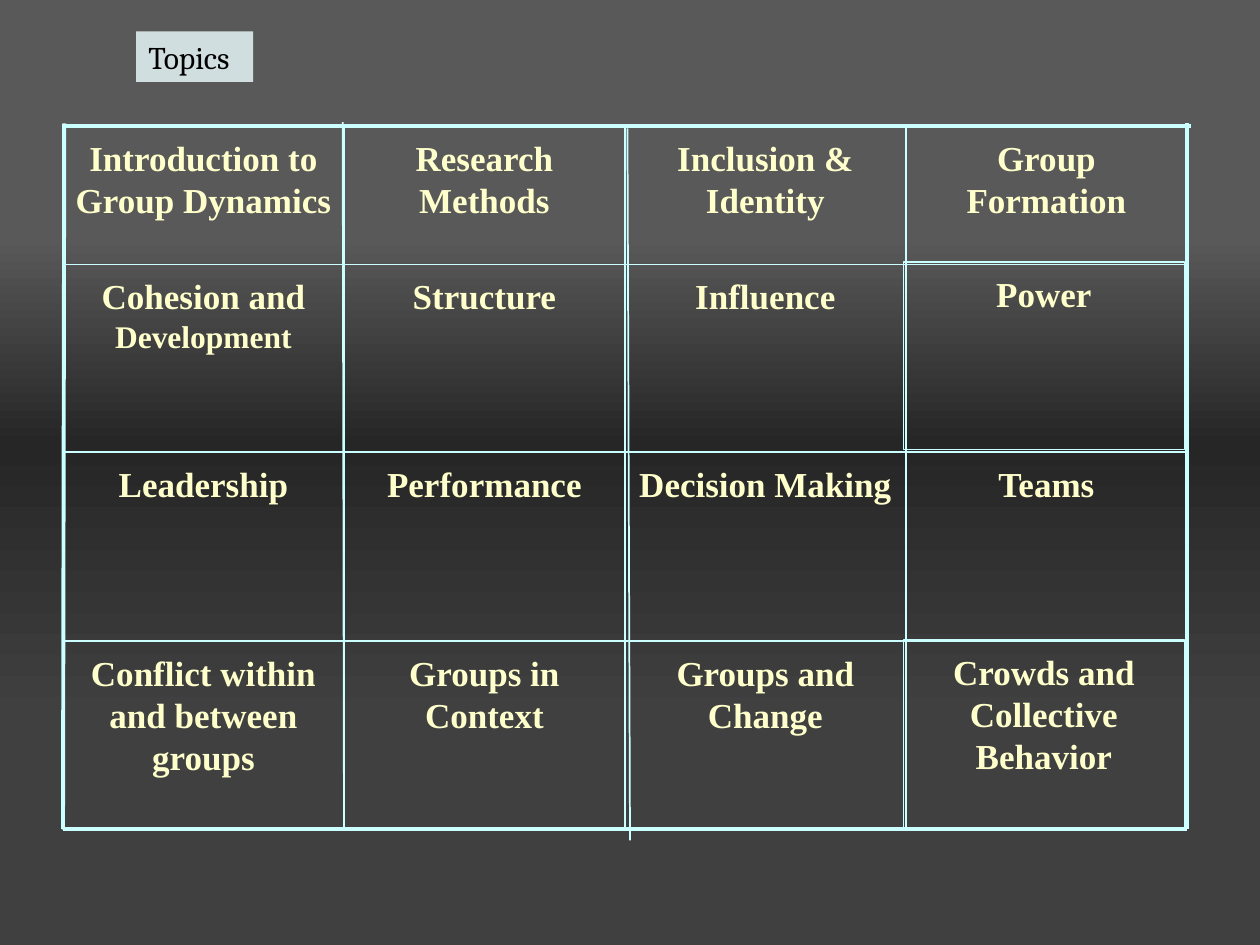
from dataclasses import dataclass

from lxml import etree
from pptx import Presentation
from pptx.dml.color import RGBColor
from pptx.enum.shapes import MSO_CONNECTOR, MSO_SHAPE
from pptx.enum.text import MSO_ANCHOR, MSO_AUTO_SIZE, PP_ALIGN
from pptx.oxml.ns import qn
from pptx.util import Inches, Pt


@dataclass(frozen=True)
class Theme:
    grid = RGBColor.from_string("CCFFFF")
    topic = RGBColor.from_string("FFFFCC")
    label = RGBColor.from_string("000000")
    label_fill = RGBColor.from_string("D1DEDF")
    backdrop = ((25, "595959"), (47, "262626"), (76, "404040"), (100, "404040"))
    topic_font = "Times New Roman"
    label_font = "Cambria"
    topic_size = Pt(20)
    small_size = Pt(18)
    cell_line = Pt(0.75)
    inner_line = Pt(1)
    outer_line = Pt(2.25)


theme = Theme()
prs = Presentation()
prs.slide_width, prs.slide_height = Inches(10), Inches(7.5)
slide = prs.slides.add_slide(prs.slide_layouts[6])

# Background gradient, running from top to bottom
backdrop = slide.background.fill
backdrop.gradient()
backdrop.gradient_angle = 270
stops = slide.element.find(".//" + qn("a:gsLst"))
for stop in list(stops):
    stops.remove(stop)
for percent, colour in theme.backdrop:
    stop = etree.SubElement(stops, qn("a:gs"), pos=str(percent * 1000))
    etree.SubElement(stop, qn("a:srgbClr"), val=colour)

# Topic cells
topics = [
    ["Introduction to Group Dynamics", "Research Methods",
     "Inclusion & Identity", "Group Formation"],
    ["Cohesion and Development", "Structure", "Influence", "Power"],
    ["Leadership", "Performance", "Decision Making", "Teams"],
    ["Conflict within and between groups", "Groups in Context",
     "Groups and Change", "Crowds and Collective Behavior"],
]
left, column_width = 0.5, 2.23
row_edges = [1, 2.1, 3.59, 5.09, 6.58]
nudged = {"Power": (-0.02, -0.02), "Crowds and Collective Behavior": (-0.02, -0.01)}
small_words = {"Development"}

for row, row_topics in enumerate(topics):
    top, bottom = row_edges[row:row + 2]
    for column, topic in enumerate(row_topics):
        dx, dy = nudged.get(topic, (0, 0))
        cell = slide.shapes.add_shape(
            MSO_SHAPE.RECTANGLE,
            Inches(left + column * column_width + dx), Inches(top + dy),
            Inches(column_width), Inches(bottom - top))
        cell.shadow.inherit = False
        cell.fill.background()
        cell.line.color.rgb = theme.grid
        cell.line.width = theme.cell_line
        frame = cell.text_frame
        frame.word_wrap = True
        frame.vertical_anchor = MSO_ANCHOR.TOP
        frame.margin_left = frame.margin_right = frame.margin_top = Inches(0.08)
        paragraph = frame.paragraphs[0]
        paragraph.alignment = PP_ALIGN.CENTER
        paragraph.font.name = theme.topic_font
        paragraph.font.size = theme.topic_size
        paragraph.font.bold = True
        paragraph.font.color.rgb = theme.topic
        lead, _, last_word = topic.rpartition(" ")
        if last_word in small_words:
            paragraph.add_run().text = lead + " "
            ending = paragraph.add_run()
            ending.text = last_word
            ending.font.size = theme.small_size
        else:
            paragraph.add_run().text = topic

# Grid rules over the cells: x1, y1, x2, y2, width
right = 9.42
rules = [(0.49, 1, 9.45, 1, theme.outer_line)]
rules += [(left, y, right, y, theme.inner_line) for y in row_edges[1:-1]]
rules += [
    (left, 6.58, right, 6.58, theme.outer_line),
    (0.51, 0.98, 0.5, 6.58, theme.outer_line),
    (2.72, 0.97, 2.73, 6.58, theme.inner_line),
    (4.98, 1.02, 5, 6.67, theme.inner_line),
    (7.19, 1.05, 7.19, 6.58, theme.inner_line),
    (right, 0.98, right, 6.58, theme.outer_line),
]
for x1, y1, x2, y2, width in rules:
    rule = slide.shapes.add_connector(
        MSO_CONNECTOR.STRAIGHT, Inches(x1), Inches(y1), Inches(x2), Inches(y2))
    rule.line.color.rgb = theme.grid
    rule.line.width = width
    etree.SubElement(rule.element.spPr, qn("a:effectLst"))

# Heading label
heading = slide.shapes.add_textbox(Inches(1.08), Inches(0.25), Inches(0.93), Inches(0.4))
heading.fill.solid()
heading.fill.fore_color.rgb = theme.label_fill
heading.text_frame.word_wrap = True
heading.text_frame.auto_size = MSO_AUTO_SIZE.SHAPE_TO_FIT_TEXT
paragraph = heading.text_frame.paragraphs[0]
paragraph.text = "Topics"
paragraph.font.name = theme.label_font
paragraph.font.size = theme.small_size
paragraph.font.color.rgb = theme.label

prs.save("out.pptx")
